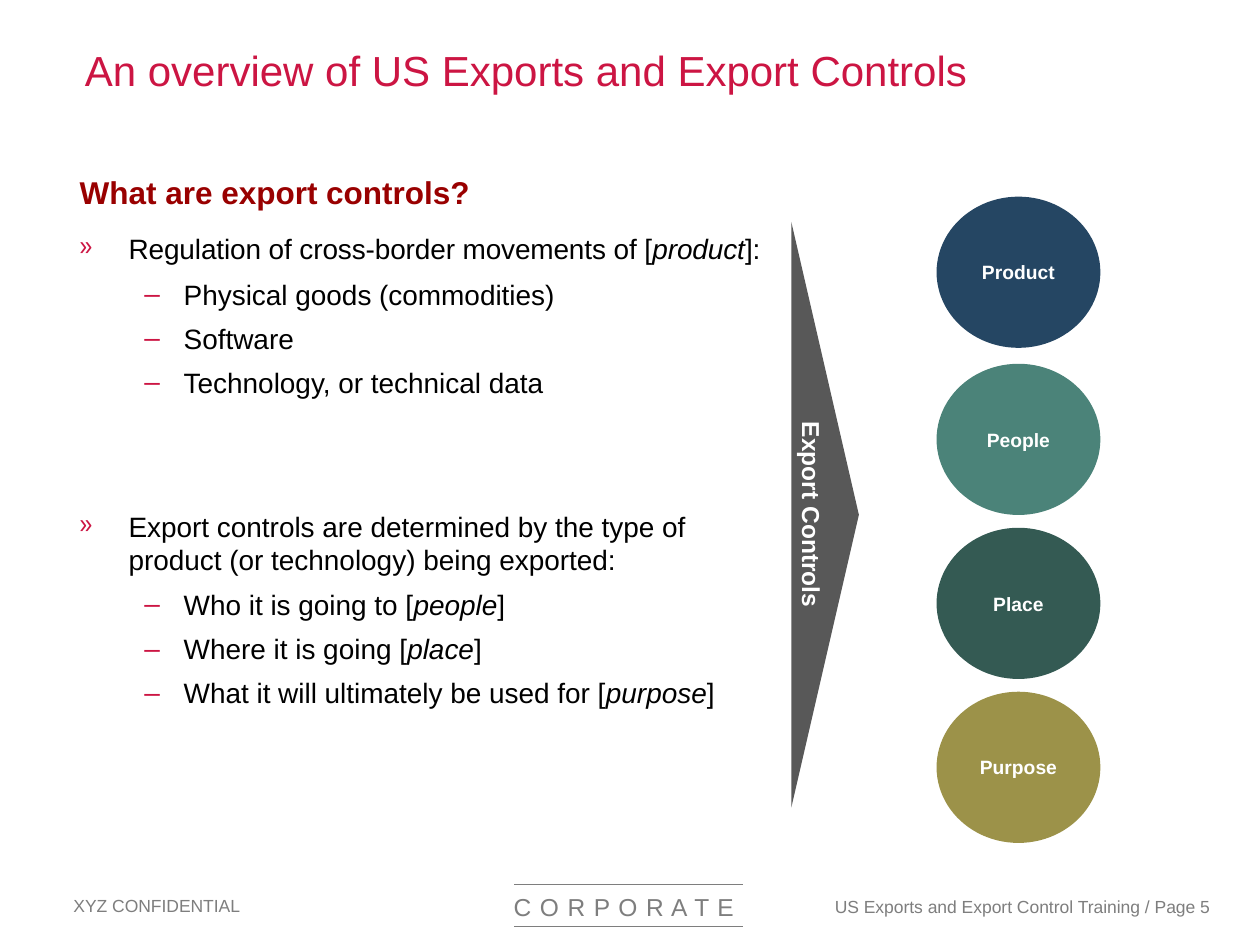
from lxml import etree
from pptx import Presentation
from pptx.dml.color import RGBColor
from pptx.enum import shapes, text
from pptx.oxml import parse_xml
from pptx.oxml.ns import nsdecls, qn
from pptx.util import Pt

CRIMSON, GREY, WHITE, BLACK = "CC1543", "7E7E7E", "FFFFFF", "000000"


def add_text(frame, content, size=16, color=BLACK, bold=False, bullet=None,
             bullet_font="Arial", margin=0, hanging=0, before=0, align="LEFT", spacing=0):
    """Add one paragraph; words between asterisks are italic."""
    paragraph = frame.paragraphs[0] if not frame.text else frame.add_paragraph()
    if bullet:
        props = paragraph._p.get_or_add_pPr()
        props.set("marL", str(Pt(margin)))
        props.set("indent", str(-Pt(hanging)))
        for xml in (f'<a:buClr {nsdecls("a")}><a:srgbClr val="{CRIMSON}"/></a:buClr>',
                    f'<a:buFont {nsdecls("a")} typeface="{bullet_font}"/>',
                    f'<a:buChar {nsdecls("a")} char="{bullet}"/>'):
            props.append(parse_xml(xml))
    paragraph.alignment = getattr(text.PP_ALIGN, align)
    if before:
        paragraph.space_before = Pt(before)
    for i, piece in enumerate(content.split("*")):
        run = paragraph.add_run()
        run.text = piece
        run.font.name, run.font.size = "Arial", Pt(size)
        run.font.bold, run.font.italic = bold, i % 2 == 1
        run.font.color.rgb = RGBColor.from_string(color)
        if spacing:
            run._r.get_or_add_rPr().set("spc", str(int(spacing * 100)))


def set_frame(shape, left, top, width, height, anchor="TOP"):
    """Place a shape and clear the insets of its text frame."""
    shape.left, shape.top, shape.width, shape.height = map(Pt, (left, top, width, height))
    frame = shape.text_frame
    frame.word_wrap = True
    frame.auto_size = text.MSO_AUTO_SIZE.NONE
    frame.margin_left = frame.margin_right = frame.margin_top = frame.margin_bottom = 0
    frame.vertical_anchor = getattr(text.MSO_ANCHOR, anchor)
    return frame


deck = Presentation()
deck.slide_width, deck.slide_height = Pt(720), Pt(540)
slide = deck.slides.add_slide(deck.slide_layouts[5])
items = slide.shapes

# Title
title = set_frame(items.title, 48.5, 25.3, 560, 31)
add_text(title, "An overview of US Exports and Export Controls", size=24, color=CRIMSON)

# Main points
guillemet = dict(bullet="»", bullet_font="Arial Narrow", margin=28, hanging=28)
definition = set_frame(items.add_textbox(0, 0, 0, 0), 45.5, 99, 400, 55)
add_text(definition, "What are export controls?", size=18, color="990000", bold=True)
add_text(definition, "Regulation of cross-border movements of [*product*]:",
         before=12, spacing=-0.05, **guillemet)
factors = set_frame(items.add_textbox(0, 0, 0, 0), 45.5, 291, 352, 40)
add_text(factors, "Export controls are determined by the type of "
         "product (or technology) being exported:", **guillemet)

# Lists under each point
sublists = [
    (158.5, ["Physical goods (commodities)", "Software", "Technology, or technical data"]),
    (335.8, ["Who it is going to [*people*]", "Where it is going [*place*]",
             "What it will ultimately be used for [*purpose*]"]),
]
for top, lines in sublists:
    sublist = set_frame(items.add_textbox(0, 0, 0, 0), 81.5, top, 345, 70)
    for i, line in enumerate(lines):
        add_text(sublist, line, bullet="–", margin=23.5, hanging=22.5, before=6 if i else 0)

# Four circles of export control
circles = [("Product", 112.4, "254663"), ("People", 207.9, "4B8379"),
           ("Place", 301.6, "345A53"), ("Purpose", 395.3, "9C9249")]
for label, top, color in circles:
    circle = items.add_shape(shapes.MSO_SHAPE.OVAL, 0, 0, 0, 0)
    circle.shadow.inherit = False
    circle.fill.solid()
    circle.fill.fore_color.rgb = RGBColor.from_string(color)
    circle.line.fill.background()
    frame = set_frame(circle, 535.2, top, 93.6, 86.4, anchor="MIDDLE")
    add_text(frame, label, size=11, color=WHITE, bold=True, align="CENTER")

# Arrow pointing at the circles
outline = items.build_freeform(Pt(452.2), Pt(126.8))
outline.add_line_segments([(Pt(452.2), Pt(461.5)), (Pt(490.8), Pt(294.2))], close=True)
arrow = outline.convert_to_shape()
arrow.shadow.inherit = False
arrow.fill.solid()
arrow.fill.fore_color.rgb = RGBColor.from_string("585858")
arrow.line.fill.background()
arrow_label = set_frame(items.add_textbox(0, 0, 0, 0), 455, 235, 18, 118, anchor="MIDDLE")
arrow_label._txBody.bodyPr.set("vert", "vert")
add_text(arrow_label, "Export Controls", size=14, color=WHITE, bold=True, align="CENTER")

# Footer
for y in (505.4, 529.2):
    rule = items.add_connector(shapes.MSO_CONNECTOR.STRAIGHT, Pt(293.8), Pt(y), Pt(424.8), Pt(y))
    rule.line.color.rgb = RGBColor.from_string(GREY)
    rule.line.width = Pt(0.5)
    etree.SubElement(rule._element.spPr, qn("a:effectLst"))
footer = [
    ("XYZ CONFIDENTIAL", 42, 511.5, 100, 10, 0),
    ("C O R P O R A T E", 293.5, 509.5, 140, 14, 0.5),
    ("US Exports and Export Control Training / Page 5", 477, 512, 226, 10, 0),
]
for content, left, top, width, size, spacing in footer:
    frame = set_frame(items.add_textbox(0, 0, 0, 0), left, top, width, 18)
    add_text(frame, content, size=size, color=GREY, spacing=spacing)

deck.save("out.pptx")
